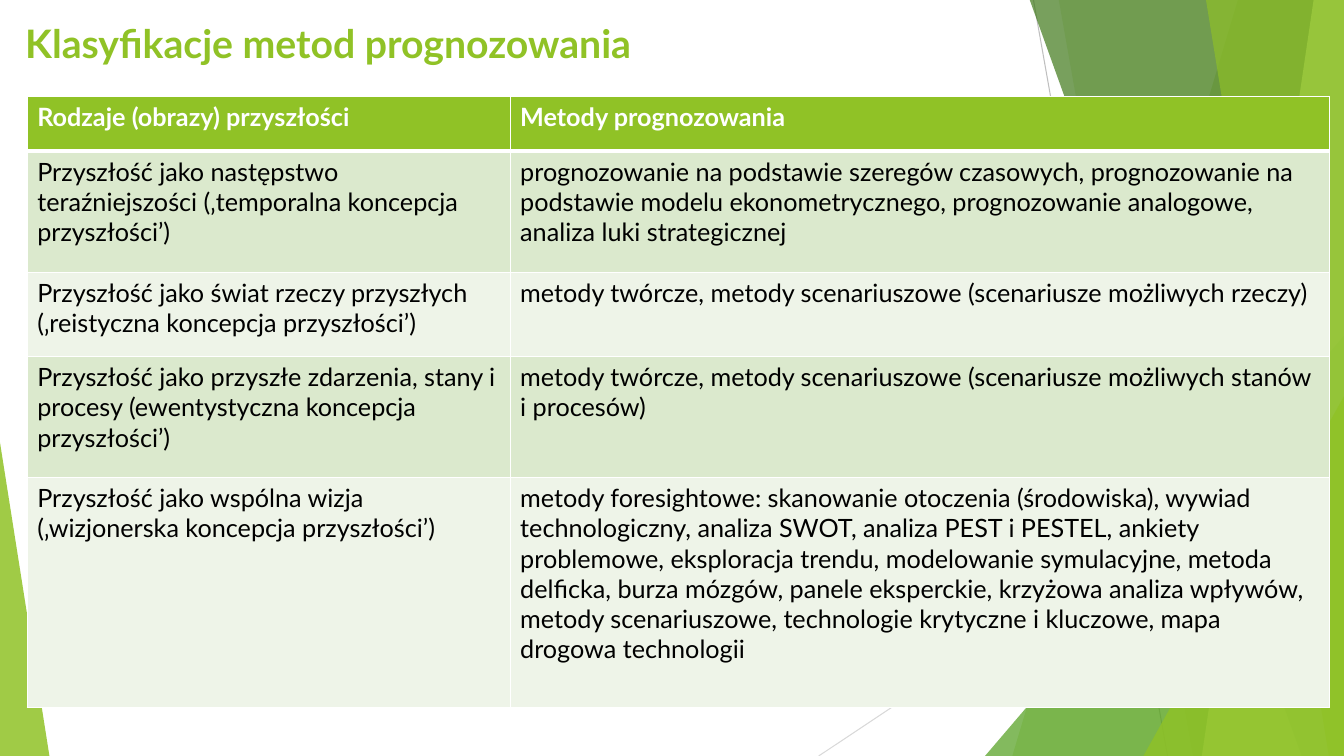
from lxml.etree import SubElement
from pptx import Presentation
from pptx.dml.color import RGBColor
from pptx.enum.shapes import MSO_CONNECTOR, MSO_SHAPE
from pptx.enum.text import MSO_ANCHOR, PP_ALIGN
from pptx.oxml.ns import qn
from pptx.util import Inches, Pt

COLORS = {
    "white": "FFFFFF", "black": "000000", "lime": "90C226", "green": "54A021",
    "forest": "3F7819", "pale": "C0E474", "band_dark": "DBE9CD",
    "band_light": "EEF4E8", "grey": "BFBFBF", "light_grey": "D9D9D9",
}
FONT = "Lato"
WIDTH, HEIGHT = 13.33, 7.5
TOP = -0.01

RAYS = [
    ((10.25, 0), (11.58, HEIGHT), "grey"),
    ((WIDTH, 4.03), (8.12, HEIGHT), "light_grey"),
]
# top-left x, bottom-left x, colour, opacity in percent
BACK_BANDS = [(12.28, 10.04, "lime", 30), (10.5, 11.83, "lime", 20)]
FRONT_BANDS = [
    (10.21, 12.91, "forest", 70),
    (13.03, 11.92, "pale", 70),
    (11.96, 13.18, "lime", 65),
]
# left, top, width, apex position, colour, opacity in percent
BACK_WEDGE = (9.77, 3.33, 3.56, 1, "green", 72)
FRONT_WEDGES = [
    (11.34, 3.93, 1.99, 1, "lime", 80),
    (0, 4.39, 0.49, 0, "lime", 85),
]

COLUMN_WIDTHS = [4.79, 8.13]
ROW_HEIGHTS = [0.54, 1.2, 0.84, 1.2, 2.28]
METHODS = [
    ("Rodzaje (obrazy) przyszłości", "Metody prognozowania"),
    ("Przyszłość jako następstwo teraźniejszości (‚temporalna koncepcja przyszłości’)",
     "prognozowanie na podstawie szeregów czasowych, prognozowanie na podstawie "
     "modelu ekonometrycznego, prognozowanie analogowe, analiza luki strategicznej"),
    ("Przyszłość jako świat rzeczy przyszłych (‚reistyczna koncepcja przyszłości’)",
     "metody twórcze, metody scenariuszowe (scenariusze możliwych rzeczy)"),
    ("Przyszłość jako przyszłe zdarzenia, stany i procesy (ewentystyczna koncepcja "
     "przyszłości’)",
     "metody twórcze, metody scenariuszowe (scenariusze możliwych stanów i procesów)"),
    ("Przyszłość jako wspólna wizja (‚wizjonerska koncepcja przyszłości’)",
     "metody foresightowe: skanowanie otoczenia (środowiska), wywiad technologiczny, "
     "analiza SWOT, analiza PEST i PESTEL, ankiety problemowe, eksploracja trendu, "
     "modelowanie symulacyjne, metoda delficka, burza mózgów, panele eksperckie, "
     "krzyżowa analiza wpływów, metody scenariuszowe, technologie krytyczne i "
     "kluczowe, mapa drogowa technologii"),
]


def rgb(color):
    return RGBColor.from_string(COLORS[color])


def write(frame, text, color, size, bold):
    frame.text = text
    paragraph = frame.paragraphs[0]
    paragraph.alignment = PP_ALIGN.LEFT
    font = paragraph.runs[0].font
    for attribute, value in {"name": FONT, "size": Pt(size), "bold": bold}.items():
        setattr(font, attribute, value)
    font.color.rgb = rgb(color)


def paint(facet, color, opacity):
    """Give a shape a translucent fill without outline or shadow."""
    facet.shadow.inherit = False
    facet.fill.solid()
    facet.fill.fore_color.rgb = rgb(color)
    tint = facet._element.spPr.find(".//" + qn("a:srgbClr"))
    SubElement(tint, qn("a:alpha"), val=str(opacity * 1000))
    facet.line.fill.background()


def add_ray(shapes, start, end, color):
    ends = [Inches(value) for value in start + end]
    ray = shapes.add_connector(MSO_CONNECTOR.STRAIGHT, *ends)
    ray.line.color.rgb = rgb(color)
    ray.line.width = Pt(0.75)
    SubElement(ray._element.spPr, qn("a:effectLst"))


def add_band(shapes, top_left, bottom_left, color, opacity):
    """Add a slanted panel that reaches the right edge of the slide."""
    corners = [(WIDTH, TOP), (WIDTH, HEIGHT), (bottom_left, HEIGHT)]
    outline = shapes.build_freeform(Inches(top_left), Inches(TOP))
    outline.add_line_segments([(Inches(x), Inches(y)) for x, y in corners], close=True)
    paint(outline.convert_to_shape(), color, opacity)


def add_wedge(shapes, left, top, width, apex, color, opacity):
    """Add a triangle that stands on the bottom edge of the slide."""
    box = [Inches(value) for value in (left, top, width, HEIGHT - top)]
    wedge = shapes.add_shape(MSO_SHAPE.ISOSCELES_TRIANGLE, *box)
    wedge.adjustments[0] = apex
    paint(wedge, color, opacity)


def add_backdrop(shapes):
    for ray in RAYS:
        add_ray(shapes, *ray)
    for band in BACK_BANDS:
        add_band(shapes, *band)
    add_wedge(shapes, *BACK_WEDGE)
    for band in FRONT_BANDS:
        add_band(shapes, *band)
    for wedge in FRONT_WEDGES:
        add_wedge(shapes, *wedge)


def set_title(title, text):
    placement = {"left": 0.15, "top": 0.12, "width": 9.4, "height": 0.61}
    for attribute, value in placement.items():
        setattr(title, attribute, Inches(value))
    title.text_frame.vertical_anchor = MSO_ANCHOR.MIDDLE
    write(title.text_frame, text, "lime", 28, True)


def set_borders(cell, widths):
    properties = cell._tc.get_or_add_tcPr()
    for side, width in widths.items():
        border = SubElement(properties, qn("a:ln" + side), w=str(Pt(width)))
        fill = SubElement(border, qn("a:solidFill"))
        SubElement(fill, qn("a:srgbClr"), val=COLORS["white"])


def add_methods_table(shapes):
    box = [Inches(value) for value in
           (0.27, 0.96, sum(COLUMN_WIDTHS), sum(ROW_HEIGHTS))]
    table = shapes.add_table(len(METHODS), len(COLUMN_WIDTHS), *box).table
    for column, width in zip(table.columns, COLUMN_WIDTHS):
        column.width = Inches(width)
    for index, (row, height, texts) in enumerate(zip(table.rows, ROW_HEIGHTS, METHODS)):
        row.height = Inches(height)
        header = index == 0
        band = "lime" if header else ("band_light", "band_dark")[index % 2]
        widths = {"L": 1, "R": 1, "T": 3 if index == 1 else 1, "B": 3 if header else 1}
        for cell, text in zip(row.cells, texts):
            set_borders(cell, widths)
            cell.fill.solid()
            cell.fill.fore_color.rgb = rgb(band)
            write(cell.text_frame, text, "white" if header else "black", 18, header)


def main():
    deck = Presentation()
    deck.slide_width, deck.slide_height = Inches(WIDTH), Inches(HEIGHT)
    slide = deck.slides.add_slide(deck.slide_layouts[5])
    add_backdrop(slide.shapes)
    set_title(slide.shapes.title, "Klasyfikacje metod prognozowania")
    add_methods_table(slide.shapes)
    deck.save("out.pptx")


if __name__ == "__main__":
    main()
